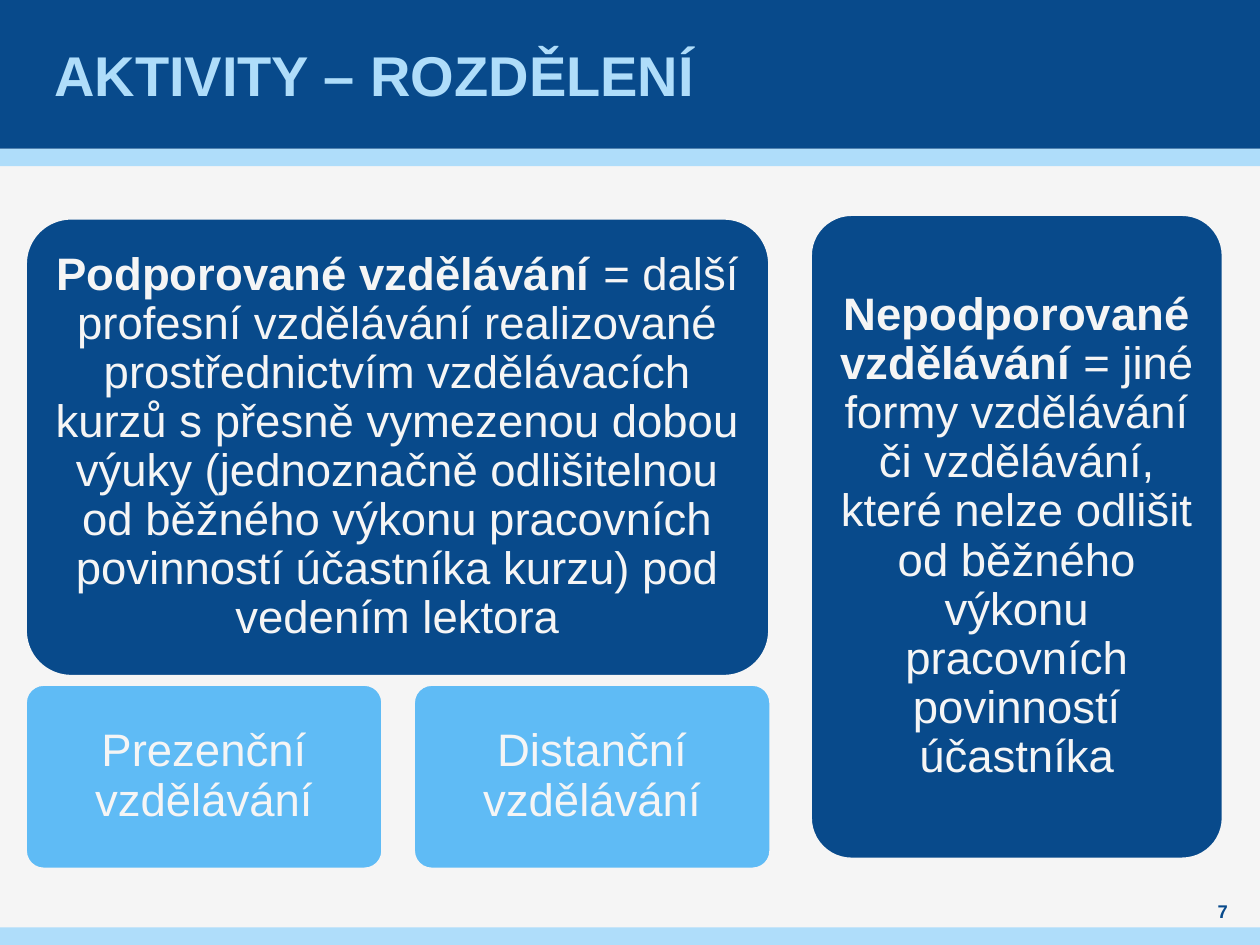
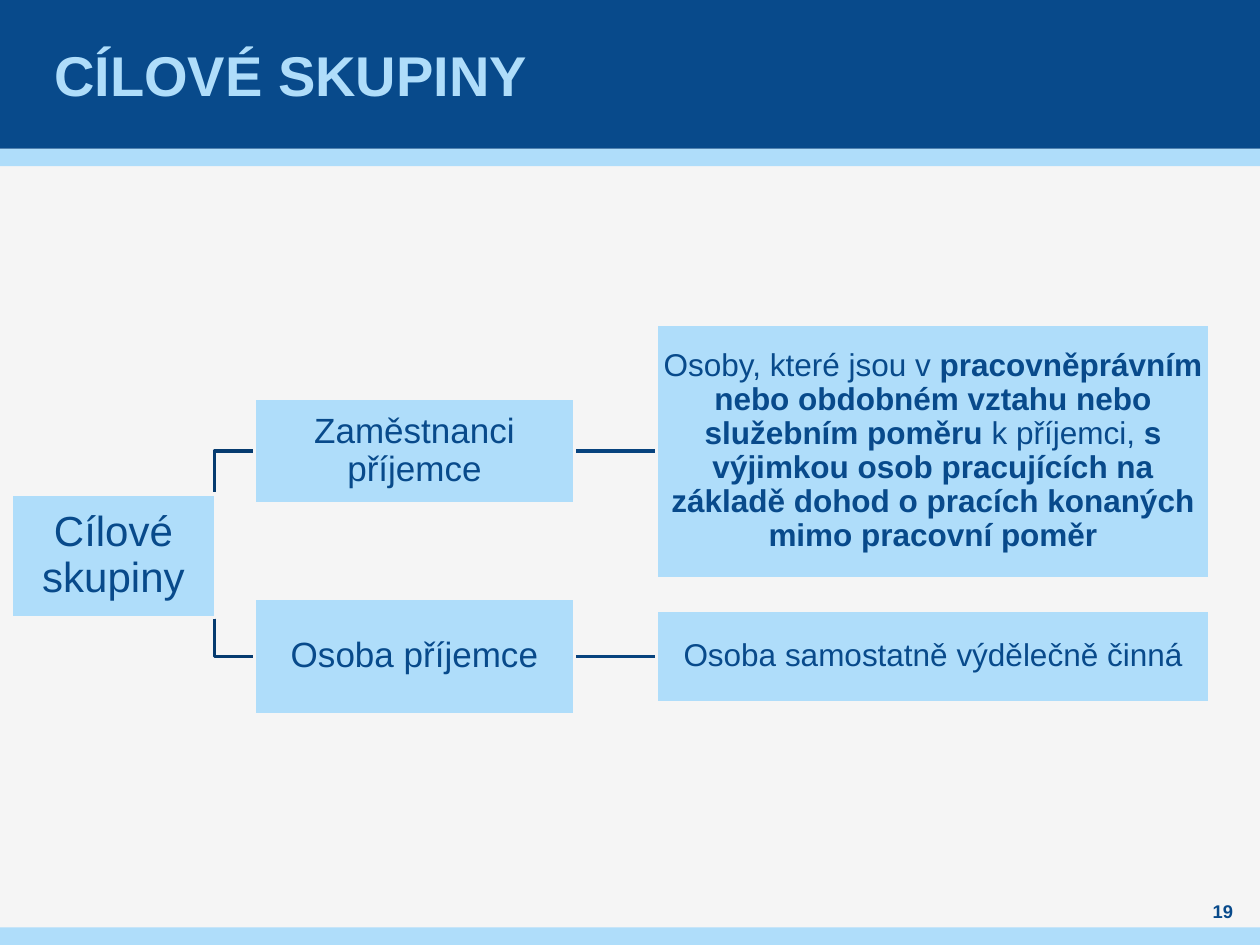
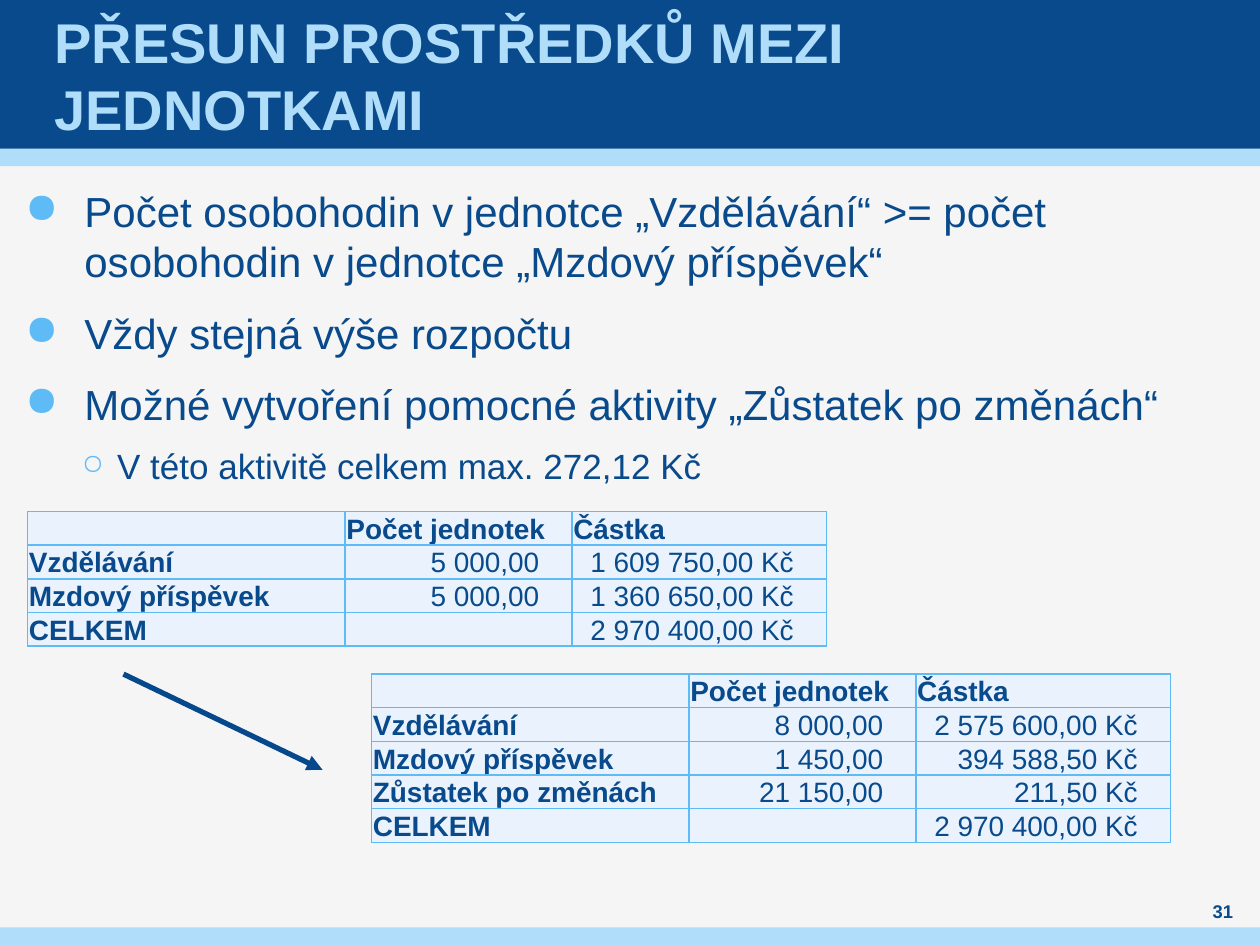
from dataclasses import dataclass

from lxml import etree
from pptx import Presentation
from pptx.dml.color import RGBColor
from pptx.enum.shapes import MSO_CONNECTOR, MSO_SHAPE
from pptx.enum.text import MSO_ANCHOR, PP_ALIGN
from pptx.oxml.ns import qn
from pptx.util import Inches, Pt

RECTANGLE = MSO_SHAPE.RECTANGLE
ROUNDED = MSO_SHAPE.ROUNDED_RECTANGLE
STRAIGHT = MSO_CONNECTOR.STRAIGHT
MIDDLE, BOTTOM = MSO_ANCHOR.MIDDLE, MSO_ANCHOR.BOTTOM
LEFT, CENTER, RIGHT = PP_ALIGN.LEFT, PP_ALIGN.CENTER, PP_ALIGN.RIGHT
SIDE_LEFT, SIDE_RIGHT = 1, 3


@dataclass(frozen=True)
class Theme:
    """Colours, font and type sizes of the presentation."""

    font: str = "Arial"
    navy: str = "084A8B"
    sky: str = "5FBBF5"
    pale: str = "AFDDFA"
    paper: str = "F5F5F5"
    cell: str = "EAF3FD"
    branch: str = "063B6F"
    link: str = "07437E"
    arrow: str = "05488B"
    title: float = 32
    card: float = 26
    large: float = 24
    medium: float = 20
    small: float = 18
    table: float = 16
    number: float = 10.5


@dataclass(frozen=True)
class Box:
    """A rectangle in inches."""

    left: float
    top: float
    width: float
    height: float

    @property
    def right(self):
        """Return the right edge."""
        return self.left + self.width

    @property
    def middle(self):
        """Return the vertical centre."""
        return self.top + self.height / 2

    def inner(self, left, top, width, height):
        """Return a box placed relative to this one."""
        return Box(self.left + left, self.top + top, width, height)

    def lengths(self):
        """Return the four lengths python-pptx expects."""
        return [Inches(value) for value in (self.left, self.top, self.width, self.height)]


THEME = Theme()
PAGE = Box(0, 0, 10, 7.5)
HEADER_HEIGHT, STRIPE_HEIGHT = 1.18, 0.14
CONTENT = Box(0, 1.32, 10, 6.04)
COLUMN_WIDTHS = (2.52, 1.8, 2.02)
ROW_HEIGHT = 0.25
NUMBER_INDENT = 0.26
TABLE_HEAD = ("", "Počet jednotek", "Částka")
ROWS_BEFORE = (
    TABLE_HEAD,
    ("Vzdělávání", "5 000,00", "1 609 750,00 Kč"),
    ("Mzdový příspěvek", "5 000,00", "1 360 650,00 Kč"),
    ("CELKEM", "", "2 970 400,00 Kč"),
)
ROWS_AFTER = (
    TABLE_HEAD,
    ("Vzdělávání", "8 000,00", "2 575 600,00 Kč"),
    ("Mzdový příspěvek", "1 450,00", "394 588,50 Kč"),
    ("Zůstatek po změnách", "21 150,00", "211,50 Kč"),
    ("CELKEM", "", "2 970 400,00 Kč"),
)
BULLETS = (
    "Počet osobohodin v jednotce „Vzdělávání“ >= počet osobohodin v jednotce „Mzdový příspěvek“",
    "Vždy stejná výše rozpočtu",
    "Možné vytvoření pomocné aktivity „Zůstatek po změnách“",
)
SUPPORTED = (
    ("Podporované vzdělávání ", True),
    ("= další profesní vzdělávání realizované prostřednictvím vzdělávacích kurzů "
     "s přesně vymezenou dobou výuky (jednoznačně odlišitelnou od běžného výkonu "
     "pracovních povinností účastníka kurzu) pod vedením lektora", False),
)
UNSUPPORTED = (
    ("Nepodporované vzdělávání ", True),
    ("= jiné formy vzdělávání či vzdělávání, které nelze odlišit od běžného výkonu "
     "pracovních povinností účastníka", False),
)
EMPLOYEES = (
    ("Osoby, které jsou v ", False),
    ("pracovněprávním nebo obdobném vztahu nebo služebním poměru", True),
    (" k příjemci, ", False),
    ("s výjimkou osob pracujících na základě dohod o pracích konaných mimo pracovní poměr", True),
)


def rgb(value):
    """Turn a hexadecimal colour into an RGBColor."""
    return RGBColor.from_string(value)


def plain(text, bold=False):
    """Return text as a single piece."""
    return ((text, bold),)


def add_element(parent, tag, **attributes):
    """Append a DrawingML element and return it."""
    return etree.SubElement(parent, qn(tag), attributes)


def write(paragraph, pieces, size, color, align=LEFT, spacing=None):
    """Write pieces of (text, bold) into a paragraph."""
    paragraph.alignment = align
    paragraph.line_spacing = spacing
    for text, bold in pieces:
        run = paragraph.add_run()
        run.text = text
        run.font.name = THEME.font
        run.font.size = Pt(size)
        run.font.bold = bold
        run.font.color.rgb = rgb(color)


def set_frame(text_frame, horizontal, vertical, anchor=MIDDLE):
    """Set the wrapping, anchor and insets of a text frame."""
    text_frame.word_wrap = True
    text_frame.vertical_anchor = anchor
    text_frame.margin_left = text_frame.margin_right = Inches(horizontal)
    text_frame.margin_top = text_frame.margin_bottom = Inches(vertical)


def add_label(slide, box, text, size, color, align=LEFT, inset=0, spacing=None):
    """Add a bold one-paragraph text box."""
    text_frame = slide.shapes.add_textbox(*box.lengths()).text_frame
    set_frame(text_frame, inset, 0)
    write(text_frame.paragraphs[0], plain(text, True), size, color, align, spacing)


def add_panel(slide, box, fill, kind=RECTANGLE):
    """Add a flat filled shape without an outline."""
    shape = slide.shapes.add_shape(kind, *box.lengths())
    shape.shadow.inherit = False
    shape.fill.solid()
    shape.fill.fore_color.rgb = rgb(fill)
    shape.line.fill.background()
    return shape


def add_node(slide, box, pieces, size, color, fill, kind=RECTANGLE, inset=0.01):
    """Add a panel with a paper-coloured outline and centred text."""
    shape = add_panel(slide, box, fill, kind)
    shape.line.color.rgb = rgb(THEME.paper)
    shape.line.width = Pt(2)
    set_frame(shape.text_frame, inset, inset)
    write(shape.text_frame.paragraphs[0], pieces, size, color, CENTER, 0.9)
    return shape


def add_card(slide, box, pieces, fill):
    """Add a rounded card."""
    card = add_node(slide, box, pieces, THEME.card, THEME.paper, fill, ROUNDED, 0.11)
    card.adjustments[0] = 0.1


def add_line(slide, start, end, color, width):
    """Add a straight connector without a shadow."""
    points = [Inches(value) for value in (*start, *end)]
    connector = slide.shapes.add_connector(STRAIGHT, *points)
    connector.line.color.rgb = rgb(color)
    connector.line.width = Pt(width)
    add_element(connector._element.spPr, "a:effectLst")
    return connector


def add_branch(slide, root, child):
    """Draw a stepped line from the centre of the root to a child."""
    start = root.left + root.width * 0.8
    bend = (start + child.left) / 2
    corners = ((bend, root.middle), (bend, child.middle), (child.left, child.middle))
    builder = slide.shapes.build_freeform(Inches(start), Inches(root.middle))
    builder.add_line_segments([(Inches(x), Inches(y)) for x, y in corners], close=False)
    branch = builder.convert_to_shape()
    branch.shadow.inherit = False
    branch.fill.background()
    branch.line.color.rgb = rgb(THEME.branch)
    branch.line.width = Pt(2)


def join(slide, source, target, source_box, target_box):
    """Join two boxes side by side with a line behind them."""
    connector = add_line(slide, (source_box.right, source_box.middle),
                         (target_box.left, target_box.middle), THEME.link, 2)
    connector.begin_connect(source, SIDE_RIGHT)
    connector.end_connect(target, SIDE_LEFT)
    connector._element.getparent().insert(2, connector._element)


def add_bullet(paragraph, mark, margin, indent, gap, percent):
    """Give a paragraph a coloured bullet, an indent and spacing."""
    paragraph.space_before = paragraph.space_after = Pt(gap)
    properties = paragraph._p.get_or_add_pPr()
    properties.set("marL", str(Inches(margin)))
    properties.set("indent", str(-Inches(indent)))
    add_element(add_element(properties, "a:buClr"), "a:srgbClr", val=THEME.sky)
    add_element(properties, "a:buSzPct", val=str(percent * 1000))
    add_element(properties, "a:buChar", char=mark)


def add_bullets(slide, box):
    """Add the list of rules with one sub-point."""
    text_frame = slide.shapes.add_textbox(*box.lengths()).text_frame
    set_frame(text_frame, 0, 0, MSO_ANCHOR.TOP)
    paragraph = text_frame.paragraphs[0]
    for text in BULLETS:
        write(paragraph, plain(text), THEME.large, THEME.navy, spacing=Pt(28.8))
        add_bullet(paragraph, "●", 0.47, 0.47, 6, 100)
        paragraph = text_frame.add_paragraph()
    paragraph.level = 1
    write(paragraph, plain("V této aktivitě celkem max. 272,12 Kč"),
          THEME.medium, THEME.navy, spacing=Pt(24))
    add_bullet(paragraph, "○", 0.73, 0.28, 3, 80)


def style_cell(cell, text, bold, align):
    """Fill, border and write one table cell."""
    properties = cell._tc.get_or_add_tcPr()
    for side in ("a:lnL", "a:lnR", "a:lnT", "a:lnB"):
        border = add_element(properties, side, w=str(Pt(1)))
        add_element(add_element(border, "a:solidFill"), "a:srgbClr", val=THEME.sky)
    cell.fill.solid()
    cell.fill.fore_color.rgb = rgb(THEME.cell)
    cell.vertical_anchor = BOTTOM
    cell.margin_left = Inches(0.01)
    cell.margin_right = Inches(NUMBER_INDENT if align == RIGHT else 0.01)
    cell.margin_top = cell.margin_bottom = 0
    paragraph = cell.text_frame.paragraphs[0]
    if text:
        write(paragraph, plain(text, bold), THEME.table, THEME.navy, align)
    else:
        add_element(paragraph._p, "a:endParaRPr", sz=str(THEME.table * 100))


def add_budget(slide, box, rows):
    """Add a budget table whose first row and column are bold."""
    table = slide.shapes.add_table(len(rows), len(COLUMN_WIDTHS), *box.lengths()).table
    table.first_row = table.horz_banding = False
    for column, width in zip(table.columns, COLUMN_WIDTHS):
        column.width = Inches(width)
    for row_index, values in enumerate(rows):
        table.rows[row_index].height = Inches(ROW_HEIGHT)
        for column_index, text in enumerate(values):
            heading = row_index == 0 or column_index == 0
            style_cell(table.cell(row_index, column_index), text, heading,
                       LEFT if heading else RIGHT)


def add_slide(presentation, title, number):
    """Add a slide with bands, a title and a number."""
    slide = presentation.slides.add_slide(presentation.slide_layouts[6])
    add_panel(slide, PAGE.inner(0, HEADER_HEIGHT, PAGE.width, STRIPE_HEIGHT), THEME.pale)
    add_panel(slide, PAGE.inner(0, 0, PAGE.width, HEADER_HEIGHT), THEME.navy)
    add_panel(slide, PAGE.inner(0, PAGE.height - STRIPE_HEIGHT, PAGE.width, STRIPE_HEIGHT),
              THEME.pale)
    add_label(slide, PAGE.inner(0.39, 0, 9.21, HEADER_HEIGHT), title, THEME.title,
              THEME.pale, inset=0.04, spacing=Pt(38.4))
    add_label(slide, PAGE.inner(9.45, 7.13, 0.51, 0.2), str(number), THEME.number,
              THEME.navy, CENTER)
    return slide


def fill_activities(slide, box):
    """Place the cards that divide the activities."""
    add_card(slide, box.inner(0.2, 0.41, 5.91, 3.64), SUPPORTED, THEME.navy)
    for index, text in enumerate(("Prezenční vzdělávání", "Distanční vzdělávání")):
        add_card(slide, box.inner(0.2 + index * 3.08, 4.11, 2.84, 1.47), plain(text), THEME.sky)
    add_card(slide, box.inner(6.43, 0.38, 3.28, 5.12), UNSUPPORTED, THEME.navy)


def fill_target_groups(slide, box):
    """Place the tree of target groups."""
    root = box.inner(0.09, 2.6, 1.62, 0.98)
    branches = (
        (box.inner(2.02, 1.84, 2.54, 0.84), plain("Zaměstnanci příjemce"),
         box.inner(5.21, 1.25, 4.39, 2.02), EMPLOYEES),
        (box.inner(2.02, 3.43, 2.54, 0.92), plain("Osoba příjemce"),
         box.inner(5.21, 3.52, 4.39, 0.74), plain("Osoba samostatně výdělečně činná")),
    )
    for group_box, group_text, detail_box, detail_text in branches:
        add_branch(slide, root, group_box)
        group = add_node(slide, group_box, group_text, THEME.medium, THEME.navy, THEME.pale)
        detail = add_node(slide, detail_box, detail_text, THEME.small, THEME.navy, THEME.pale)
        join(slide, group, detail, group_box, detail_box)
    add_node(slide, root, plain("Cílové skupiny"), THEME.large, THEME.navy, THEME.pale,
             inset=0.02)


def fill_transfer(slide, box):
    """Place the rules, both budgets and the arrow between them."""
    add_bullets(slide, box.inner(0.2, 0.15, 9.61, 2.5))
    width = sum(COLUMN_WIDTHS)
    for left, top, rows in ((0.22, 2.74, ROWS_BEFORE), (2.95, 4.03, ROWS_AFTER)):
        add_budget(slide, box.inner(left, top, width, ROW_HEIGHT * len(rows)), rows)
    path_box = box.inner(0.98, 4.03, 1.58, 0.76)
    arrow = add_line(slide, (path_box.left, path_box.top),
                     (path_box.right, path_box.top + path_box.height), THEME.arrow, 3)
    add_element(arrow.line._get_or_add_ln(), "a:tailEnd", type="triangle")


def main():
    """Build and save the presentation."""
    presentation = Presentation()
    presentation.slide_width = Inches(PAGE.width)
    presentation.slide_height = Inches(PAGE.height)
    background = presentation.slide_master.background.fill
    background.solid()
    background.fore_color.rgb = rgb(THEME.paper)
    pages = (
        ("AKTIVITY – ROZDĚLENÍ", 7, fill_activities),
        ("CÍLOVÉ SKUPINY", 19, fill_target_groups),
        ("PŘESUN PROSTŘEDKŮ MEZI JEDNOTKAMI", 31, fill_transfer),
    )
    for title, number, fill_content in pages:
        fill_content(add_slide(presentation, title, number), CONTENT)
    presentation.save("out.pptx")


if __name__ == "__main__":
    main()
